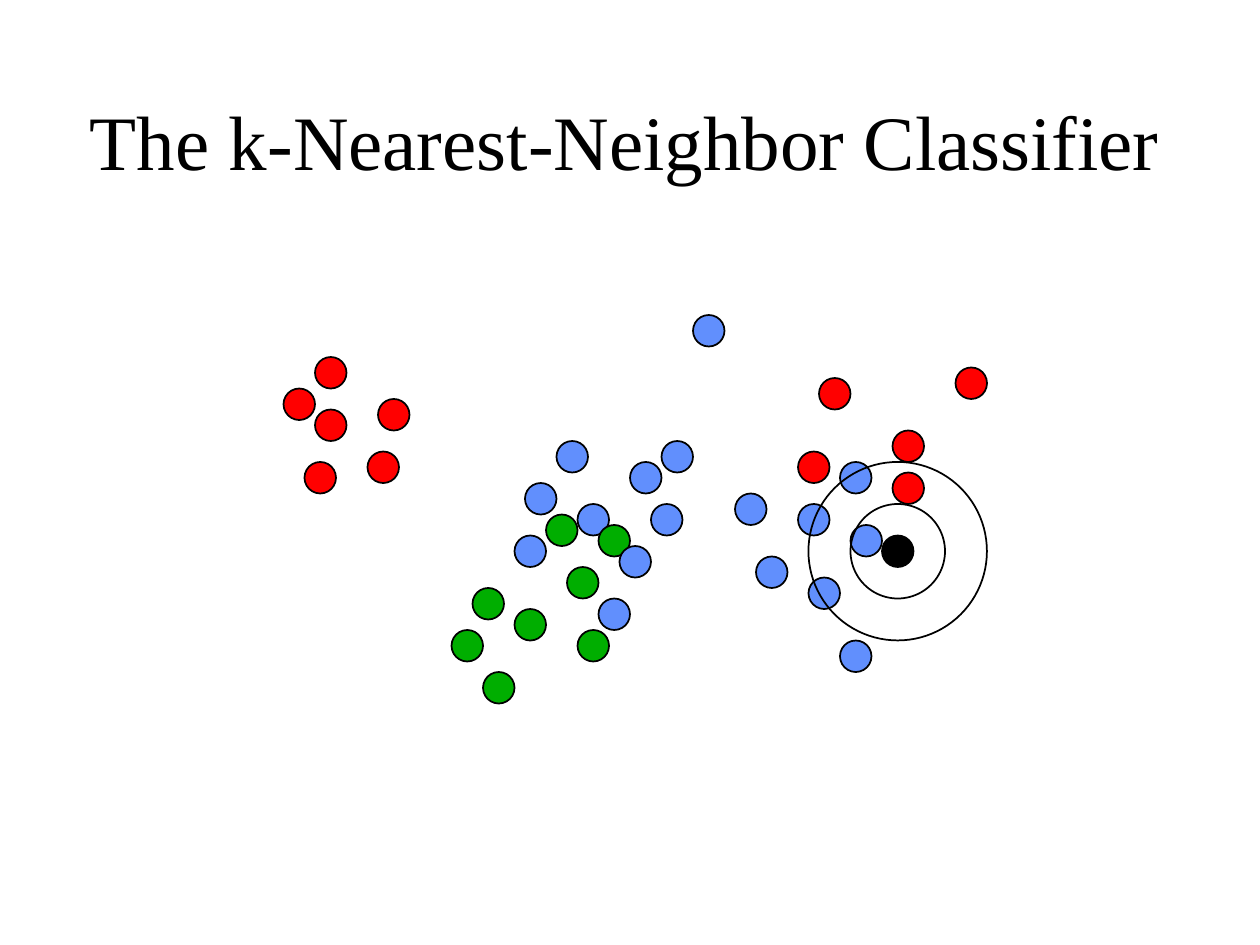
from dataclasses import dataclass

from pptx import Presentation
from pptx.dml.color import RGBColor
from pptx.enum.shapes import MSO_SHAPE as Shape
from pptx.enum.text import MSO_ANCHOR as Anchor, PP_ALIGN as Align
from pptx.shapes.shapetree import GroupShapes, SlideShapes
from pptx.util import Inches, Length, Pt

COLORS = {"black": "000000", "blue": "618FFD", "red": "FF0000", "green": "00AE00"}
DOT = 3
QUERY = (85.5, 52.5)
RINGS = (9, 17)


@dataclass(frozen=True)
class Cluster:
    color: str
    corners: tuple[tuple[int, int], ...]


CLUSTERS = (
    Cluster("blue", ((60, 44), (62, 48), (72, 53), (70, 47), (77, 55), (76, 48), (81, 50),
                     (80, 61), (80, 44), (53, 42), (50, 46), (55, 48), (63, 42))),
    Cluster("red", ((76, 43), (85, 45), (30, 34), (35, 43), (36, 38), (30, 39),
                    (27, 37), (29, 44), (78, 36), (85, 41), (91, 35))),
    Cluster("green", ((57, 50),)),
    Cluster("blue", ((59, 52), (57, 57), (66, 30), (49, 51))),
    Cluster("green", ((49, 58), (55, 60), (43, 60), (46, 64), (54, 54), (45, 56), (52, 49))),
)


def rgb(name: str) -> RGBColor:
    return RGBColor.from_string(COLORS[name])


def grid(units: float) -> Length:
    return Inches(units / 12)


def add_circle(shapes: SlideShapes | GroupShapes, x: float, y: float,
               size: float, color: str | None = None) -> None:
    s = shapes.add_shape(Shape.OVAL, grid(x), grid(y), grid(size), grid(size))
    s.shadow.inherit = False
    if color is None:
        s.fill.background()
    else:
        s.fill.solid()
        s.fill.fore_color.rgb = rgb(color)
    s.line.color.rgb = rgb("black")
    s.line.width = Pt(1)


def add_centered(shapes: GroupShapes, center: tuple[float, float],
                 size: float, color: str | None = None) -> None:
    x, y = center
    add_circle(shapes, x - size / 2, y - size / 2, size, color)


def add_text(shapes: SlideShapes, text: str, *, left: float, top: float, width: float,
             height: float, size: float, font: str, color: str) -> None:
    tf = shapes.add_textbox(Inches(left), Inches(top), Inches(width), Inches(height)).text_frame
    tf.word_wrap = True
    tf.vertical_anchor = Anchor.MIDDLE
    p = tf.paragraphs[0]
    p.alignment = Align.CENTER
    r = p.add_run()
    r.text = text
    r.font.size = Pt(size)
    r.font.name = font
    r.font.color.rgb = rgb(color)


def main() -> None:
    prs = Presentation()
    prs.slide_width, prs.slide_height = Inches(10), Inches(7.5)
    shapes = prs.slides.add_slide(prs.slide_layouts[6]).shapes

    add_text(shapes, "The k-Nearest-Neighbor Classifier", left=0, top=0.48, width=9.92,
             height=1.25, size=44, font="Times New Roman", color="black")
    for cluster in CLUSTERS:
        for x, y in cluster.corners:
            add_circle(shapes, x, y, DOT, cluster.color)

    query = shapes.add_group_shape().shapes
    add_centered(query, QUERY, DOT, "black")
    for size in RINGS:
        add_centered(query, QUERY, size)

    prs.save("out.pptx")


if __name__ == "__main__":
    main()
